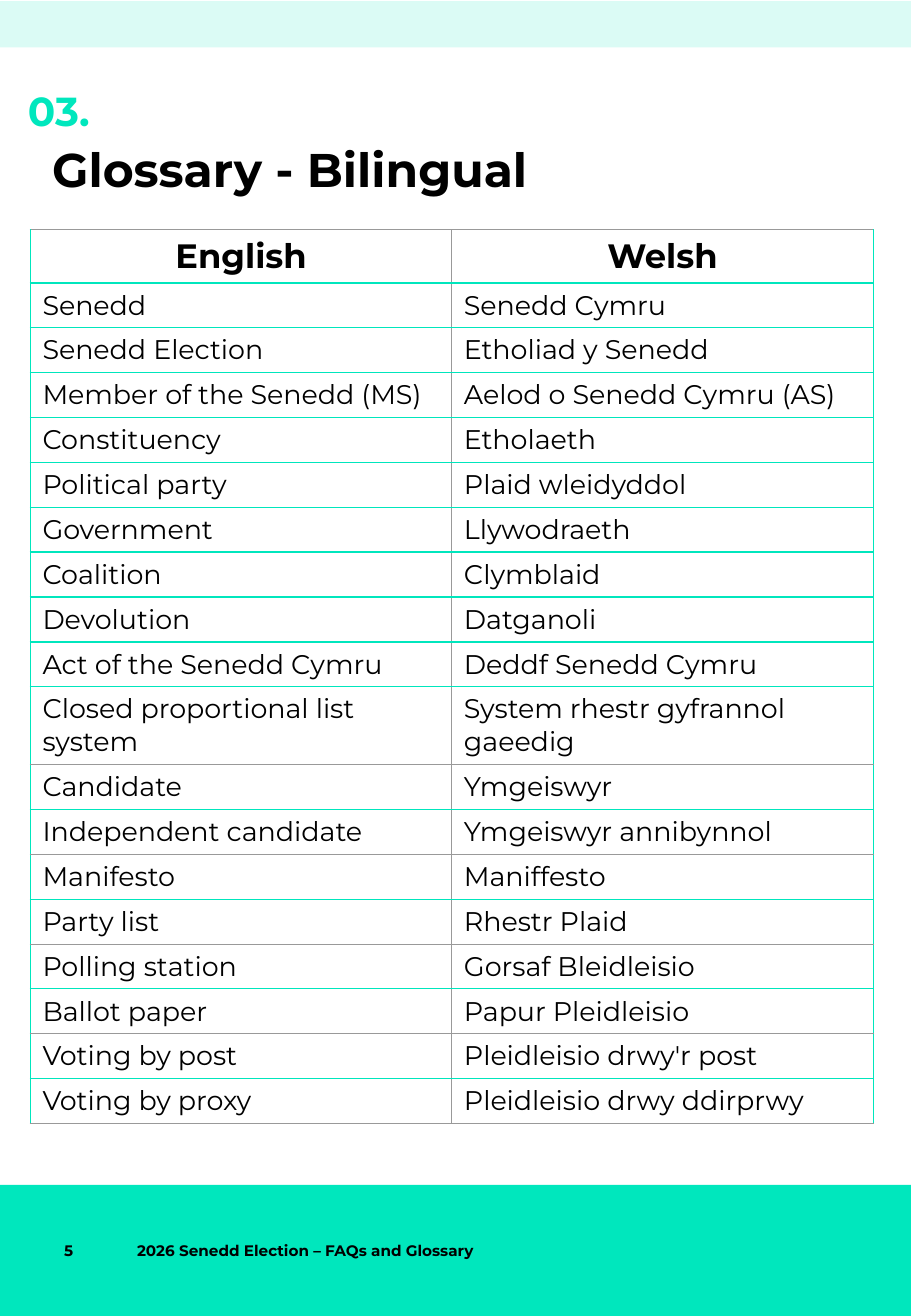
from lxml.etree import SubElement
from pptx import Presentation
from pptx.dml.color import RGBColor
from pptx.enum.shapes import MSO_SHAPE
from pptx.enum.text import MSO_ANCHOR, PP_ALIGN
from pptx.oxml.ns import qn
from pptx.util import Inches, Pt

FONT = "Montserrat"
TEAL = RGBColor(0x00, 0xE7, 0xBD)
EDGE = RGBColor(0x00, 0xE6, 0xBD)
GREY = RGBColor(0x99, 0x99, 0x99)
BLACK = RGBColor(0x00, 0x00, 0x00)

WIDTH, HEIGHT = 7.5, 10.84
FOOT_TOP, FOOT_TALL = 9.76, 1.08
WRAPPED = 10  # row with two lines of text

TERMS = [
    ("English", "Welsh"),
    ("Senedd", "Senedd Cymru"),
    ("Senedd Election", "Etholiad y Senedd"),
    ("Member of the Senedd (MS)", "Aelod o Senedd Cymru (AS)"),
    ("Constituency", "Etholaeth"),
    ("Political party", "Plaid wleidyddol"),
    ("Government", "Llywodraeth"),
    ("Coalition", "Clymblaid"),
    ("Devolution", "Datganoli"),
    ("Act of the Senedd Cymru", "Deddf Senedd Cymru"),
    ("Closed proportional list system", "System rhestr gyfrannol gaeedig"),
    ("Candidate", "Ymgeiswyr"),
    ("Independent candidate", "Ymgeiswyr annibynnol"),
    ("Manifesto", "Maniffesto"),
    ("Party list", "Rhestr Plaid"),
    ("Polling station", "Gorsaf Bleidleisio"),
    ("Ballot paper", "Papur Pleidleisio"),
    ("Voting by post", "Pleidleisio drwy'r post"),
    ("Voting by proxy", "Pleidleisio drwy ddirprwy"),
]


def write(frame, text, size=16, bold=True, color=BLACK, align=PP_ALIGN.LEFT,
          anchor=None, spacing=None, after=None, plain=False):
    """Fill a text frame with one formatted paragraph."""
    frame.word_wrap = True
    if anchor is not None:
        frame.vertical_anchor = anchor
    para = frame.paragraphs[0]
    para.alignment = align
    para.space_before = Pt(0)
    if spacing:
        para.line_spacing = spacing
    if after:
        para.space_after = Pt(after)
    if plain:  # no bullet, no hanging indent
        props = para._p.get_or_add_pPr()
        props.set("marL", "0")
        props.set("indent", "0")
        SubElement(props, qn("a:buNone"))
    run = para.add_run()
    run.text = text
    font = run.font
    font.name, font.size, font.bold = FONT, Pt(size), bold
    font.color.rgb = color


def add_band(slide, top, tall, alpha=None):
    """Draw a teal band across the page."""
    band = slide.shapes.add_shape(MSO_SHAPE.RECTANGLE, 0, Inches(top),
                                  Inches(WIDTH), Inches(tall))
    band.shadow.inherit = False
    band.line.fill.background()
    band.fill.solid()
    band.fill.fore_color.rgb = TEAL
    if alpha:
        tint = band._element.spPr.find(f"{qn('a:solidFill')}/{qn('a:srgbClr')}")
        SubElement(tint, qn("a:alpha"), val=str(alpha * 1000))


def add_label(slide, text, left, wide):
    """Add a small label in the footer."""
    box = slide.shapes.add_textbox(Inches(left), Inches(FOOT_TOP),
                                   Inches(wide), Inches(FOOT_TALL))
    write(box.text_frame, text, size=9, anchor=MSO_ANCHOR.MIDDLE)


def fill_holder(holder, text, left, top, wide, tall, **style):
    """Move a placeholder and set its text."""
    holder.left, holder.top = Inches(left), Inches(top)
    holder.width, holder.height = Inches(wide), Inches(tall)
    frame = holder.text_frame
    frame.margin_left = frame.margin_right = 0
    frame.margin_top = frame.margin_bottom = 0
    write(frame, text, anchor=MSO_ANCHOR.TOP, **style)


def set_edge(cell, side, color, width):
    """Set one border of a cell."""
    line = SubElement(cell._tc.get_or_add_tcPr(), qn(f"a:ln{side}"),
                      w=str(Pt(width)))
    fill = SubElement(line, qn("a:solidFill"))
    SubElement(fill, qn("a:srgbClr"), val=str(color))


def row_rule(row):
    """Colour and width of the line below a row; -1 is the top edge."""
    if 0 <= row < WRAPPED:
        return EDGE, 1
    return (EDGE if row > 0 and row % 2 else GREY), 0.5


def add_terms(slide):
    """Add the two-column glossary."""
    rows = len(TERMS)
    tall = [0.44 if r == 0 else 0.64 if r == WRAPPED else 0.37
            for r in range(rows)]
    table = slide.shapes.add_table(rows, 2, Inches(0.25), Inches(1.89),
                                   Inches(6.94), Inches(sum(tall))).table
    table.horz_banding = False
    for r, pair in enumerate(TERMS):
        table.rows[r].height = Inches(tall[r])
        for c, term in enumerate(pair):
            cell = table.cell(r, c)
            outer, inner = (EDGE, 1), (GREY, 0.5)
            set_edge(cell, "L", *(inner if c else outer))
            set_edge(cell, "R", *(outer if c else inner))
            set_edge(cell, "T", *row_rule(r - 1))
            set_edge(cell, "B", *row_rule(r))
            cell.fill.background()
            if r == 0:
                write(cell.text_frame, term, size=20, align=PP_ALIGN.CENTER)
            else:
                write(cell.text_frame, term, bold=False)


def main():
    deck = Presentation()
    deck.slide_width, deck.slide_height = Inches(WIDTH), Inches(HEIGHT)
    slide = deck.slides.add_slide(deck.slide_layouts[1])

    # Bands and footer
    add_band(slide, FOOT_TOP, FOOT_TALL)
    add_band(slide, 0.01, 0.38, alpha=14)
    add_label(slide, "2026 Senedd Election – FAQs and Glossary", 1.03, 3.14)
    add_label(slide, "5", 0.43, 0.62)

    # Heading
    fill_holder(slide.shapes.title, "Glossary - Bilingual",
                0.43, 1.21, 6.82, 0.9, size=28, spacing=0.9)
    fill_holder(slide.placeholders[1], "03.", 0.23, 0.71, 6.46, 0.37,
                size=24, color=TEAL, after=2, plain=True)

    # Glossary
    add_terms(slide)
    deck.save("out.pptx")


if __name__ == "__main__":
    main()
